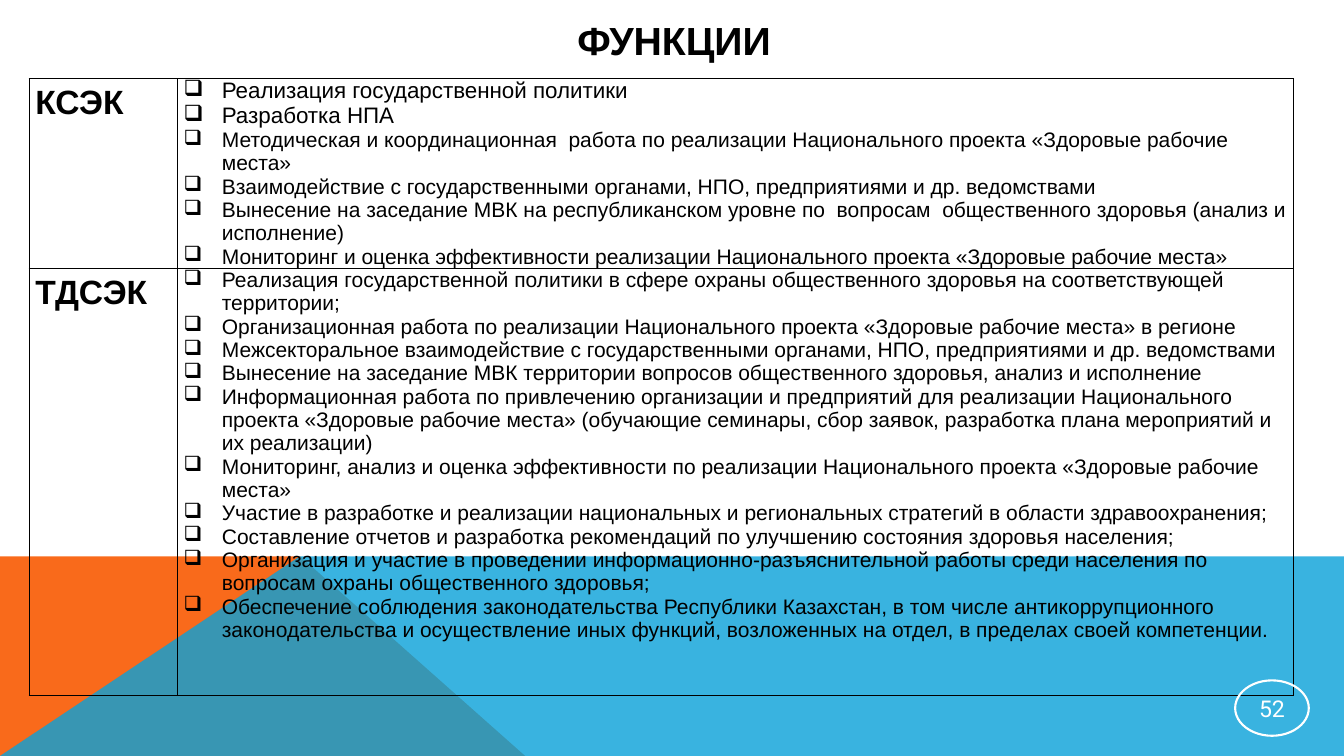
import pptx
import pptx.util
import pptx.oxml
import pptx.oxml.ns
import pptx.dml.color
import pptx.enum.text
import pptx.enum.shapes
from dataclasses import dataclass


@dataclass(frozen=True)
class Theme:
    black: str = "000000"
    white: str = "FFFFFF"
    orange: str = "F96A1B"
    blue: str = "08A1D9"
    font: str = "Arial"
    number_font: str = "Roboto"
    title: float = 28
    label: float = 24
    lead: float = 16
    body: float = 15
    number: float = 16.5


theme = Theme()
rgb = pptx.dml.color.RGBColor.from_string
ALIGN = pptx.enum.text.PP_ALIGN
MIDDLE = pptx.enum.text.MSO_ANCHOR.MIDDLE
NS = pptx.oxml.ns.nsdecls("a")

prs = pptx.Presentation()
prs.slide_width = pptx.util.Inches(13.33)
prs.slide_height = pptx.util.Inches(7.5)


def grid(*cells):
    """Turn alternating x, y positions on a 100 by 100 grid into slide lengths."""
    sides = (prs.slide_width, prs.slide_height)
    return [pptx.util.Emu(round(c * sides[i % 2] / 100)) for i, c in enumerate(cells)]


def add_run(p, text, size, bold=False, color=theme.black, font=theme.font):
    r = p.add_run()
    r.text = text
    r.font.size = pptx.util.Pt(size)
    r.font.bold = bold
    r.font.name = font
    r.font.color.rgb = rgb(color)


s = prs.slides.add_slide(prs.slide_layouts[5])

# Coloured wedges along the foot of the slide
HORIZON = 73.6
wedges = [
    (theme.orange, 100, [(0, 100), (0, HORIZON), (22.35, HORIZON), (39.08, 100)]),
    (theme.blue, 80, [(0, 100), (22.3, HORIZON), (100, HORIZON), (100, 100)]),
]
for color, opacity, corners in wedges:
    points = [grid(*corner) for corner in corners]
    builder = s.shapes.build_freeform(*points[0])
    builder.add_line_segments(points[1:], close=True)
    sp = builder.convert_to_shape()
    sp.shadow.inherit = False
    sp.line.fill.background()
    sp.fill.solid()
    sp.fill.fore_color.rgb = rgb(color)
    if opacity < 100:
        clr = sp.fill._xPr.find(".//" + pptx.oxml.ns.qn("a:srgbClr"))
        clr.append(pptx.oxml.parse_xml(f'<a:alpha {NS} val="{opacity * 1000}"/>'))

# Title, moved in front of the wedges
title = s.shapes.title
s.shapes._spTree.append(title._element)
title.left, title.top, title.width, title.height = grid(9, 1.33, 82.3, 8)
tf = title.text_frame
tf.auto_size = pptx.enum.text.MSO_AUTO_SIZE.NONE
tf.vertical_anchor = MIDDLE
p = tf.paragraphs[0]
p.alignment = ALIGN.CENTER
add_run(p, "ФУНКЦИИ", theme.title, bold=True)

# Table of functions: body label, number of larger lead items, items
functions = [
    ("КСЭК", 2, [
        "Реализация государственной политики",
        "Разработка НПА",
        "Методическая и координационная  работа по реализации Национального проекта «Здоровые рабочие места»",
        "Взаимодействие с государственными органами, НПО, предприятиями и др. ведомствами",
        "Вынесение на заседание МВК на республиканском уровне по  вопросам  общественного здоровья (анализ и исполнение)",
        "Мониторинг и оценка эффективности реализации Национального проекта «Здоровые рабочие места»",
    ]),
    ("ТДСЭК", 0, [
        "Реализация государственной политики в сфере охраны общественного здоровья на соответствующей территории;",
        "Организационная работа по реализации Национального проекта «Здоровые рабочие места» в регионе",
        "Межсекторальное взаимодействие с государственными органами, НПО, предприятиями и др. ведомствами",
        "Вынесение на заседание МВК территории вопросов общественного здоровья, анализ и исполнение",
        "Информационная работа по привлечению организации и предприятий для реализации Национального проекта «Здоровые рабочие места» (обучающие семинары, сбор заявок, разработка плана мероприятий и их реализации)",
        "Мониторинг, анализ и оценка эффективности по реализации Национального проекта «Здоровые рабочие места»",
        "Участие в разработке и реализации национальных и региональных стратегий в области здравоохранения;",
        "Составление отчетов и разработка рекомендаций по улучшению состояния здоровья населения;",
        "Организация и участие в проведении информационно-разъяснительной работы среди населения по вопросам охраны общественного здоровья;",
        "Обеспечение соблюдения законодательства Республики Казахстан, в том числе антикоррупционного законодательства и осуществление иных функций, возложенных на отдел, в пределах своей компетенции.",
    ]),
]
label_w, row1_h, items_w, row2_h = grid(11.03, 24.8, 83.05, 56.5)
left, top = grid(2.18, 10.4)
table = s.shapes.add_table(2, 2, left, top, label_w + items_w, row1_h + row2_h).table
table.first_row = table.horz_banding = False
table.columns[0].width, table.columns[1].width = label_w, items_w
table.rows[0].height, table.rows[1].height = row1_h, row2_h

inset, indent = grid(0.45)[0], grid(2.85)[0]
for cell in table.iter_cells():
    cell.margin_left = cell.margin_right = inset
    cell.margin_top = cell.margin_bottom = 0
    tcPr = cell._tc.get_or_add_tcPr()
    for side in "LRTB":
        tcPr.append(pptx.oxml.parse_xml(
            f'<a:ln{side} {NS} w="12700"><a:solidFill><a:srgbClr val="{theme.black}"/>'
            f'</a:solidFill></a:ln{side}>'))
    cell.fill.background()

for row, (label, leads, items) in enumerate(functions):
    p = table.cell(row, 0).text_frame.paragraphs[0]
    p.line_spacing = 1.15
    add_run(p, label, theme.label, bold=True)
    tf = table.cell(row, 1).text_frame
    for i, item in enumerate(items):
        p = tf.add_paragraph() if i else tf.paragraphs[0]
        pPr = p._p.get_or_add_pPr()
        pPr.set("marL", str(indent))
        pPr.set("indent", str(-indent))
        for bullet in (f'<a:buClr {NS}><a:srgbClr val="{theme.black}"/></a:buClr>',
                       f'<a:buChar {NS} char="❑"/>'):
            pPr.append(pptx.oxml.parse_xml(bullet))
        add_run(p, item, theme.lead if i < leads else theme.body)

# Slide number in a ring
ring = s.shapes.add_shape(pptx.enum.shapes.MSO_SHAPE.OVAL, *grid(91.9, 90, 5.48, 7.33))
ring.shadow.inherit = False
ring.fill.background()
ring.line.color.rgb = rgb(theme.white)
ring.line.width = pptx.util.Pt(1.5)
tf = ring.text_frame
tf.margin_left = tf.margin_right = tf.margin_top = tf.margin_bottom = pptx.util.Inches(0.01)
tf.vertical_anchor = MIDDLE
p = tf.paragraphs[0]
p.alignment = ALIGN.CENTER
add_run(p, "52", theme.number, color=theme.white, font=theme.number_font)

prs.save("out.pptx")
